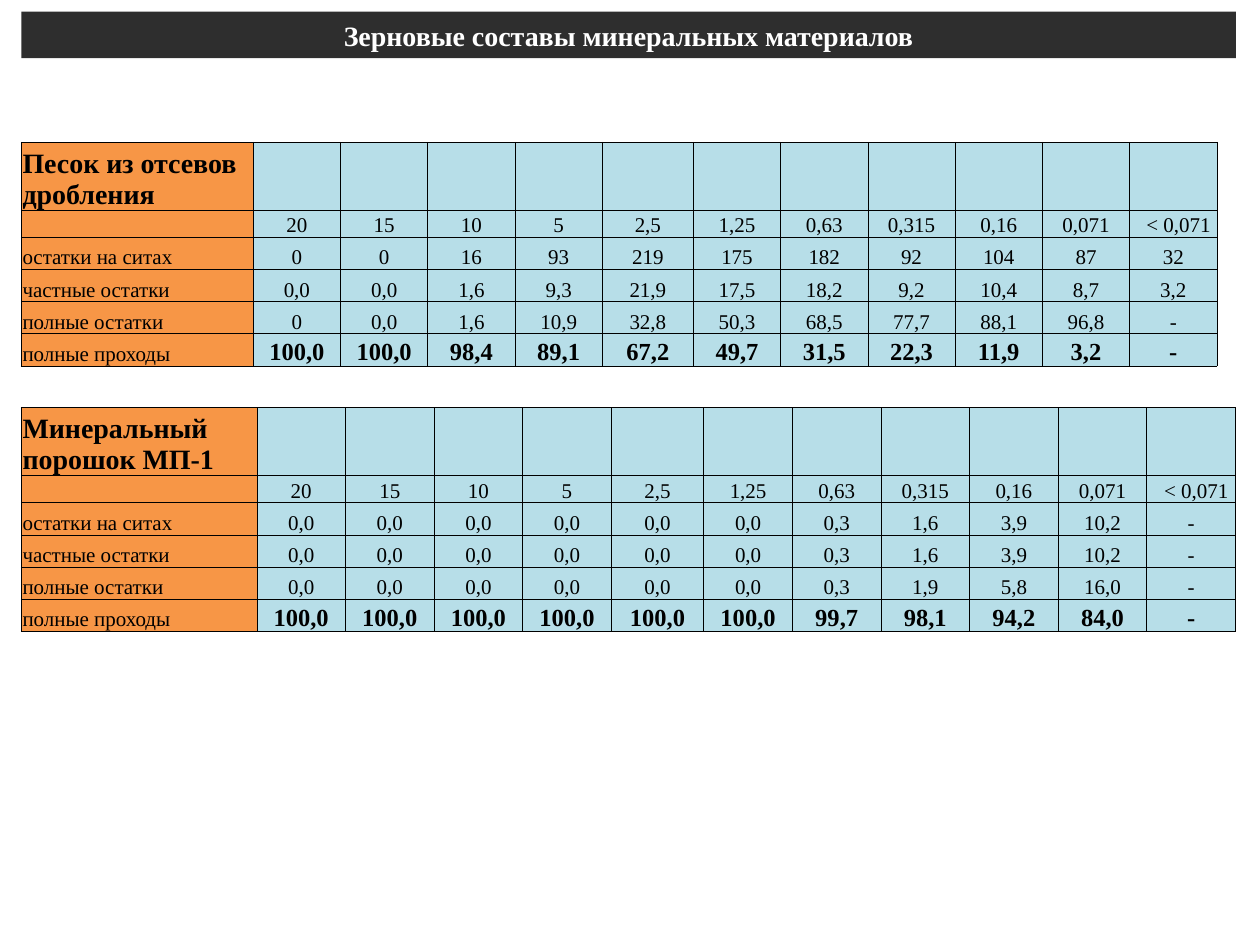
from dataclasses import dataclass

from lxml.etree import SubElement
from pptx import Presentation
from pptx.dml.color import RGBColor
from pptx.enum.shapes import MSO_SHAPE
from pptx.enum.text import MSO_ANCHOR, PP_ALIGN
from pptx.oxml.ns import qn
from pptx.util import Pt


@dataclass(frozen=True)
class Theme:
    font: str = "Times New Roman"
    ink: str = "000000"
    paper: str = "FFFFFF"
    label_fill: str = "F79646"
    value_fill: str = "B7DEE8"
    heading: int = 16
    passing: int = 14
    body: int = 12
    border: float = 0.5
    bar_opacity: int = 82


THEME = Theme()

SIEVES = "20 15 10 5 2,5 1,25 0,63 0,315 0,16 0,071".split() + ["< 0,071"]
ROW_LABELS = ["остатки на ситах", "частные остатки", "полные остатки", "полные проходы"]
ROW_HEIGHTS = [38.9, 15.4] + [18.4] * len(ROW_LABELS)
LABEL_SHARE, WIDE_SHARE, WIDE_SIEVE = 0.194, 0.0762, "2,5"
UNDERSIZE_INDENT = 6

SAND = [
    "0 0 16 93 219 175 182 92 104 87 32",
    "0,0 0,0 1,6 9,3 21,9 17,5 18,2 9,2 10,4 8,7 3,2",
    "0 0,0 1,6 10,9 32,8 50,3 68,5 77,7 88,1 96,8 -",
    "100,0 100,0 98,4 89,1 67,2 49,7 31,5 22,3 11,9 3,2 -",
]
POWDER = [
    "0,0 0,0 0,0 0,0 0,0 0,0 0,3 1,6 3,9 10,2 -",
    "0,0 0,0 0,0 0,0 0,0 0,0 0,3 1,6 3,9 10,2 -",
    "0,0 0,0 0,0 0,0 0,0 0,0 0,3 1,9 5,8 16,0 -",
    "100,0 100,0 100,0 100,0 100,0 100,0 99,7 98,1 94,2 84,0 -",
]


def rgb(code):
    return RGBColor.from_string(code)


def write(paragraph, text, size, color, bold=False):
    run = paragraph.add_run()
    run.text = text
    run.font.name = THEME.font
    run.font.size = Pt(size)
    run.font.bold = bold
    run.font.color.rgb = rgb(color)


def add_title_bar(slide, left, top, width, height, title):
    bar = slide.shapes.add_shape(
        MSO_SHAPE.RECTANGLE, Pt(left), Pt(top), Pt(width), Pt(height))
    bar.shadow.inherit = False
    bar.line.fill.background()
    bar.fill.solid()
    bar.fill.fore_color.rgb = rgb(THEME.ink)
    color = bar.fill._xPr.find(".//" + qn("a:srgbClr"))
    SubElement(color, qn("a:alpha"), val=str(THEME.bar_opacity * 1000))
    frame = bar.text_frame
    frame.word_wrap = True
    frame.vertical_anchor = MSO_ANCHOR.MIDDLE
    paragraph = frame.paragraphs[0]
    paragraph.alignment = PP_ALIGN.CENTER
    write(paragraph, title, THEME.heading, THEME.paper, bold=True)


def add_borders(cell):
    properties = cell._tc.get_or_add_tcPr()
    for side in ("lnL", "lnR", "lnT", "lnB"):
        line = SubElement(properties, qn(f"a:{side}"), w=str(Pt(THEME.border)))
        fill = SubElement(line, qn("a:solidFill"))
        SubElement(fill, qn("a:srgbClr"), val=THEME.ink)


def fill_cell(cell, text, is_label, size, bold):
    add_borders(cell)
    cell.fill.solid()
    cell.fill.fore_color.rgb = rgb(THEME.label_fill if is_label else THEME.value_fill)
    cell.vertical_anchor = MSO_ANCHOR.BOTTOM
    indent = UNDERSIZE_INDENT if text == SIEVES[-1] else 0
    cell.margin_left = Pt(0.7 + indent)
    cell.margin_right = cell.margin_top = Pt(0.7)
    cell.margin_bottom = Pt(0)
    paragraph = cell.text_frame.paragraphs[0]
    paragraph.alignment = PP_ALIGN.LEFT if is_label else PP_ALIGN.CENTER
    if text:
        write(paragraph, text, size, THEME.ink, bold)
    else:
        # Keeps the default 18 pt of an empty cell from stretching its row
        SubElement(paragraph._p, qn("a:endParaRPr"), sz=str(THEME.body * 100))


def add_grading_table(slide, left, top, width, material, results):
    rows = [[material] + [""] * len(SIEVES), [""] + SIEVES]
    rows += [[label] + line.split() for label, line in zip(ROW_LABELS, results)]
    table = slide.shapes.add_table(
        len(rows), len(rows[0]), Pt(left), Pt(top), Pt(width), Pt(sum(ROW_HEIGHTS))).table
    table.first_row = table.horz_banding = False

    sieve_share = (1 - LABEL_SHARE - WIDE_SHARE) / (len(SIEVES) - 1)
    shares = [LABEL_SHARE] + [
        WIDE_SHARE if sieve == WIDE_SIEVE else sieve_share for sieve in SIEVES]
    for column, share in zip(table.columns, shares):
        column.width = Pt(width * share)
    for row, height in zip(table.rows, ROW_HEIGHTS):
        row.height = Pt(height)

    for r, texts in enumerate(rows):
        for c, text in enumerate(texts):
            is_label = c == 0
            is_heading = is_label and r == 0
            is_passing = not is_label and r == len(rows) - 1
            size = (THEME.heading if is_heading
                    else THEME.passing if is_passing else THEME.body)
            fill_cell(table.cell(r, c), text, is_label, size, is_heading or is_passing)


def main():
    deck = Presentation()
    deck.slide_width, deck.slide_height = Pt(720), Pt(540)
    slide = deck.slides.add_slide(deck.slide_layouts[6])
    left, full_width = 12.2, 694
    add_title_bar(slide, left, 6.7, full_width, 26.6,
                  "Зерновые составы минеральных материалов")
    add_grading_table(slide, left, 81.3, 683.3, "Песок из отсевов дробления", SAND)
    add_grading_table(slide, left, 233, full_width, "Минеральный порошок МП-1", POWDER)
    deck.save("out.pptx")


if __name__ == "__main__":
    main()
